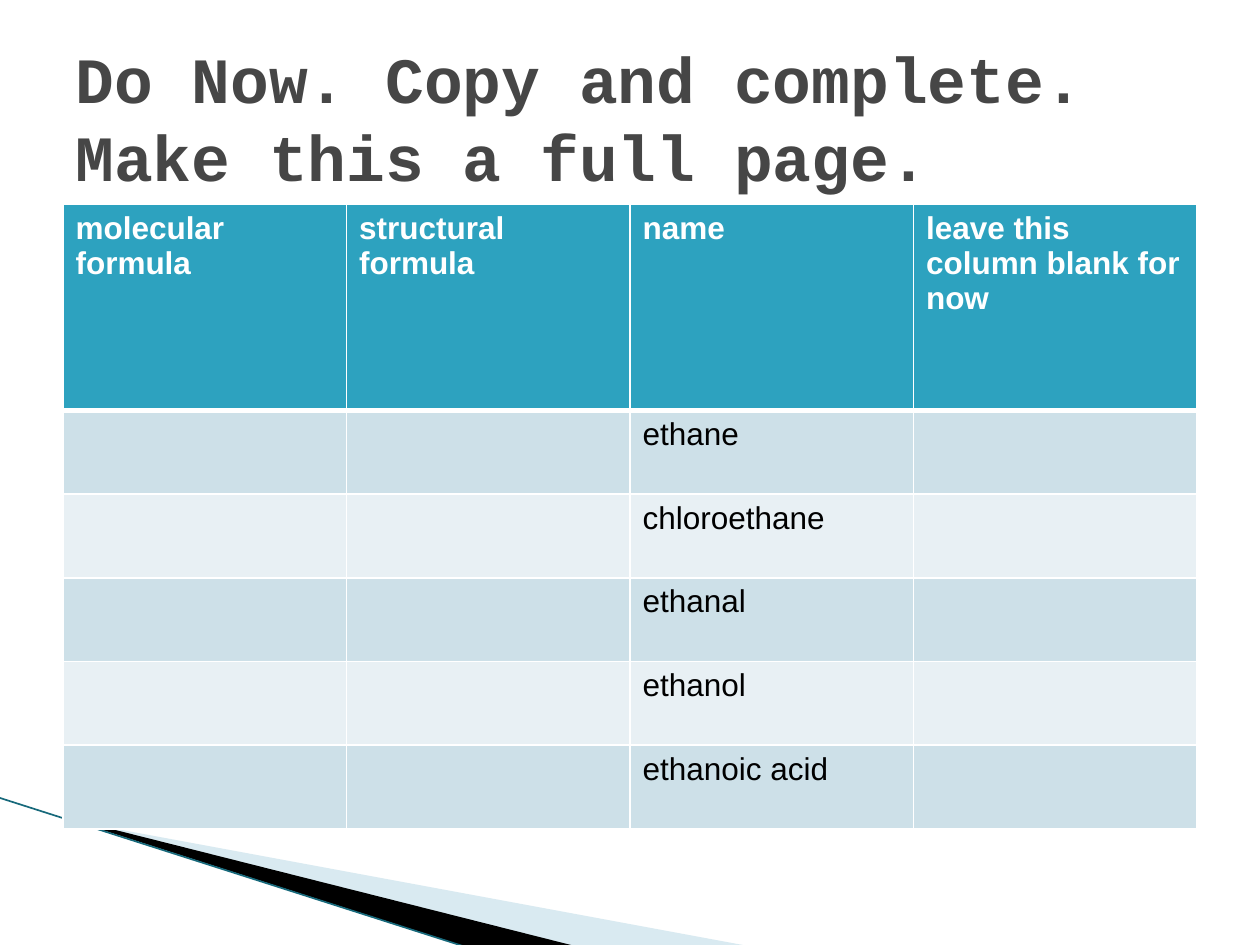
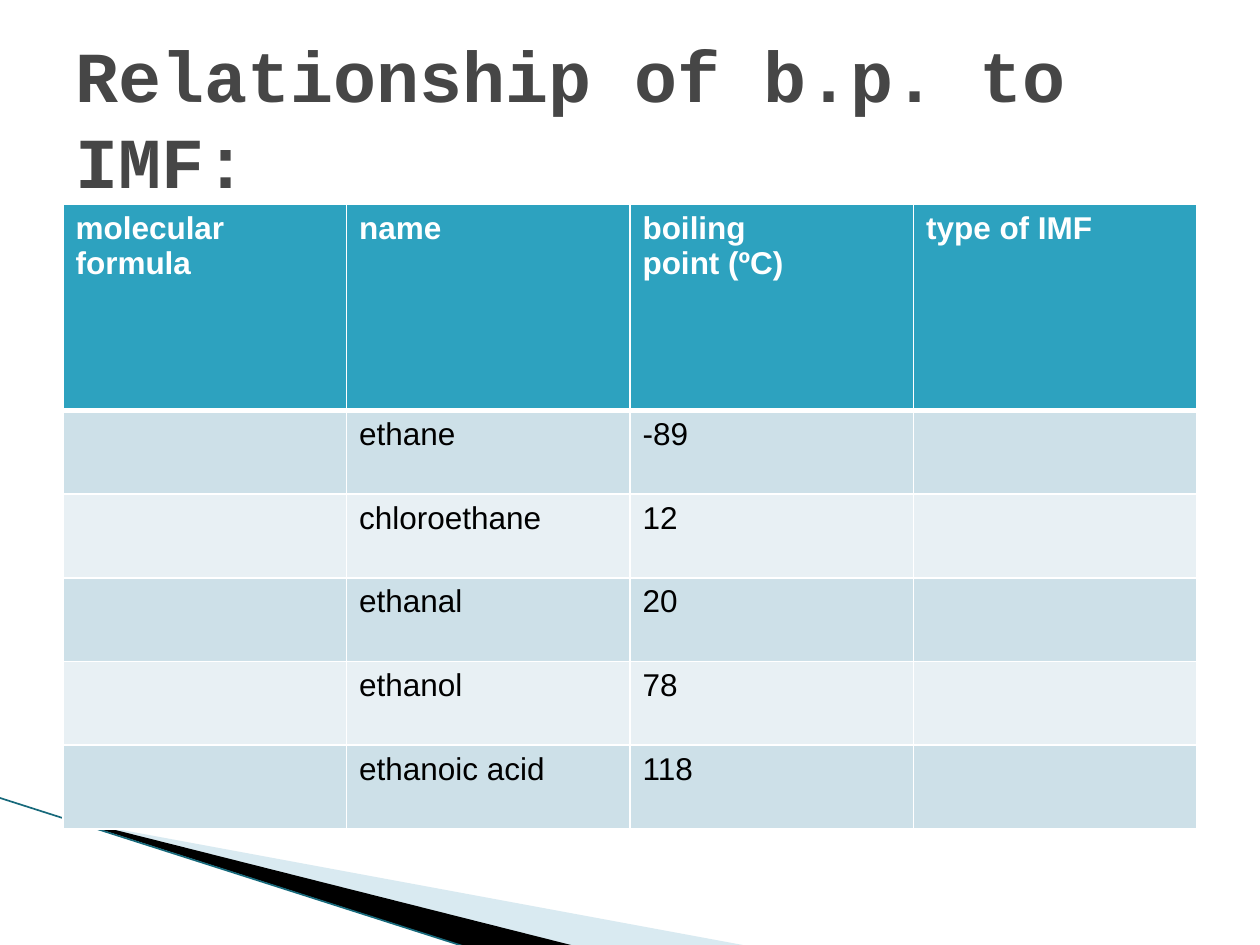
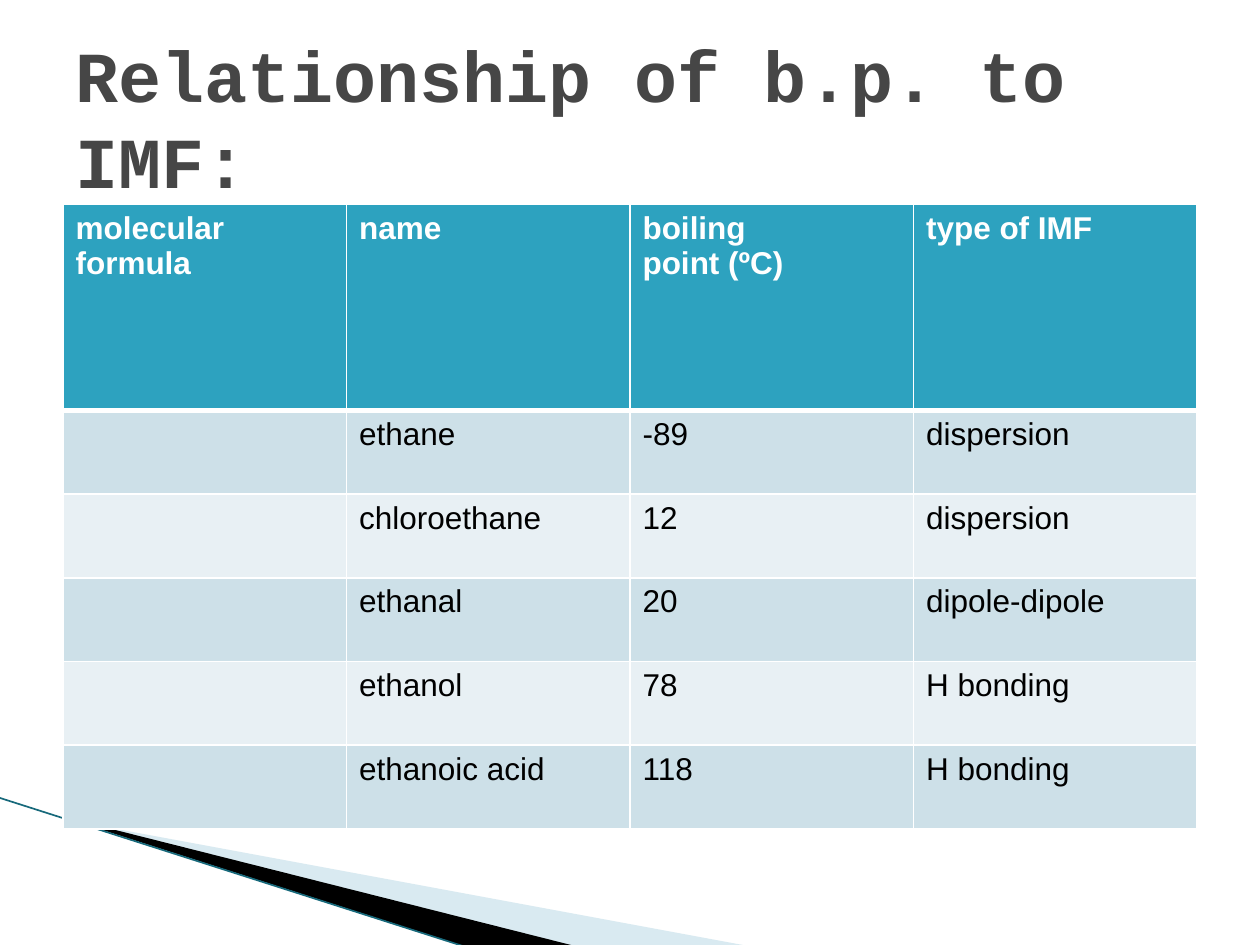
from lxml import etree
from pptx import Presentation
from pptx.dml.color import RGBColor
from pptx.enum.shapes import MSO_CONNECTOR
from pptx.enum.text import MSO_ANCHOR
from pptx.oxml.ns import qn
from pptx.util import Pt

LINE = MSO_CONNECTOR.STRAIGHT
MIDDLE = MSO_ANCHOR.MIDDLE

theme = {
    "white": RGBColor.from_string("FFFFFF"),
    "black": RGBColor.from_string("000000"),
    "gray": RGBColor.from_string("464646"),
    "teal": RGBColor.from_string("2DA2BF"),
    "bands": [RGBColor.from_string("CDE0E8"), RGBColor.from_string("E8F0F4")],
    "pale": RGBColor.from_string("A0CBDC"),
    "edge": RGBColor.from_string("17697B"),
    "rule": 1,
    "thick": 3,
    "cell": Pt(18),
    "long": Pt(36.9),
    "short": Pt(41),
}
head_font = {"name": "Arial", "size": theme["cell"], "bold": True}
body_font = {**head_font, "bold": False}
title_font = {"name": "Courier New", "bold": True}
layout = {"word_wrap": True, "vertical_anchor": MIDDLE}

wedges = [
    ([(39.6, 468.72), (428.4, 540.72), (328.32, 540.72), (39.6, 468)], theme["pale"], 40000),
    ([(38.16, 467.28), (329.04, 540.72), (267.84, 541.44), (38.88, 468)], theme["black"], None),
]

names = ["ethane", "chloroethane", "ethanal", "ethanol", "ethanoic acid"]
points = ["-89", "12", "20", "78", "118"]
forces = ["dispersion", "dispersion", "dipole-dipole", "H bonding", "H bonding"]
blank = [""] * len(names)
heads = ["molecular \nformula", "name", "boiling \npoint (ºC)", "type of IMF"]
bp_title = "Relationship of b.p. to IMF:"

pages = [
    {
        "title": "Do Now. Copy and complete. Make this a full page.",
        "size": theme["long"],
        "heads": ["molecular \nformula", "structural\nformula", "name", "leave this column blank for now"],
        "cols": [blank, blank, names, blank],
    },
    {"title": bp_title, "size": theme["short"], "heads": heads, "cols": [blank, names, points, blank]},
    {"title": bp_title, "size": theme["short"], "heads": heads, "cols": [blank, names, points, forces]},
]


def write(para, text, font, color):
    para.text = text
    for run in para.runs:
        for key, value in font.items():
            setattr(run.font, key, value)
        run.font.color.rgb = color


def border(cell, widths):
    props = cell._tc.get_or_add_tcPr()
    for side, width in widths.items():
        line = etree.SubElement(props, qn(f"a:ln{side}"), w=str(Pt(width)))
        fill = etree.SubElement(line, qn("a:solidFill"))
        etree.SubElement(fill, qn("a:srgbClr"), val=str(theme["white"]))


deck = Presentation()
deck.slide_width, deck.slide_height = Pt(720), Pt(540)

for page in pages:
    slide = deck.slides.add_slide(deck.slide_layouts[6])
    shapes = slide.shapes

    for spots, color, alpha in wedges:
        spots = [(Pt(x), Pt(y)) for x, y in spots]
        pen = shapes.build_freeform(*spots[0])
        pen.add_line_segments(spots[1:])
        wedge = pen.convert_to_shape()
        wedge.shadow.inherit = False
        wedge.line.fill.background()
        wedge.fill.solid()
        wedge.fill.fore_color.rgb = color
        if alpha:
            tint = wedge._element.spPr.find(qn("a:solidFill"))[0]
            etree.SubElement(tint, qn("a:alpha"), val=str(alpha))

    edge = shapes.add_connector(LINE, Pt(-0.72), Pt(455.76), Pt(267.12), Pt(541.44))
    edge.line.color.rgb = theme["edge"]
    edge.line.width = Pt(0.95)
    etree.SubElement(edge._element.spPr, qn("a:effectLst"))

    grid = [page["heads"], *zip(*page["cols"])]
    table = shapes.add_table(len(grid), len(heads), Pt(36), Pt(116.64), Pt(648), Pt(357)).table
    for r, row in enumerate(grid):
        table.rows[r].height = Pt(47.8 if r else 118)
        for c, text in enumerate(row):
            cell = table.cell(r, c)
            widths = dict.fromkeys("LRTB", theme["rule"])
            if r < 2:
                widths["T" if r else "B"] = theme["thick"]
            border(cell, widths)
            cell.fill.solid()
            cell.fill.fore_color.rgb = theme["bands"][(r - 1) % 2] if r else theme["teal"]
            font, color = (body_font, theme["black"]) if r else (head_font, theme["white"])
            write(cell.text_frame.paragraphs[0], text, font, color)

    frame = shapes.add_textbox(Pt(36), Pt(21.6), Pt(648), Pt(90)).text_frame
    for key, value in layout.items():
        setattr(frame, key, value)
    write(frame.paragraphs[0], page["title"], {**title_font, "size": page["size"]}, theme["gray"])

deck.save("out.pptx")
